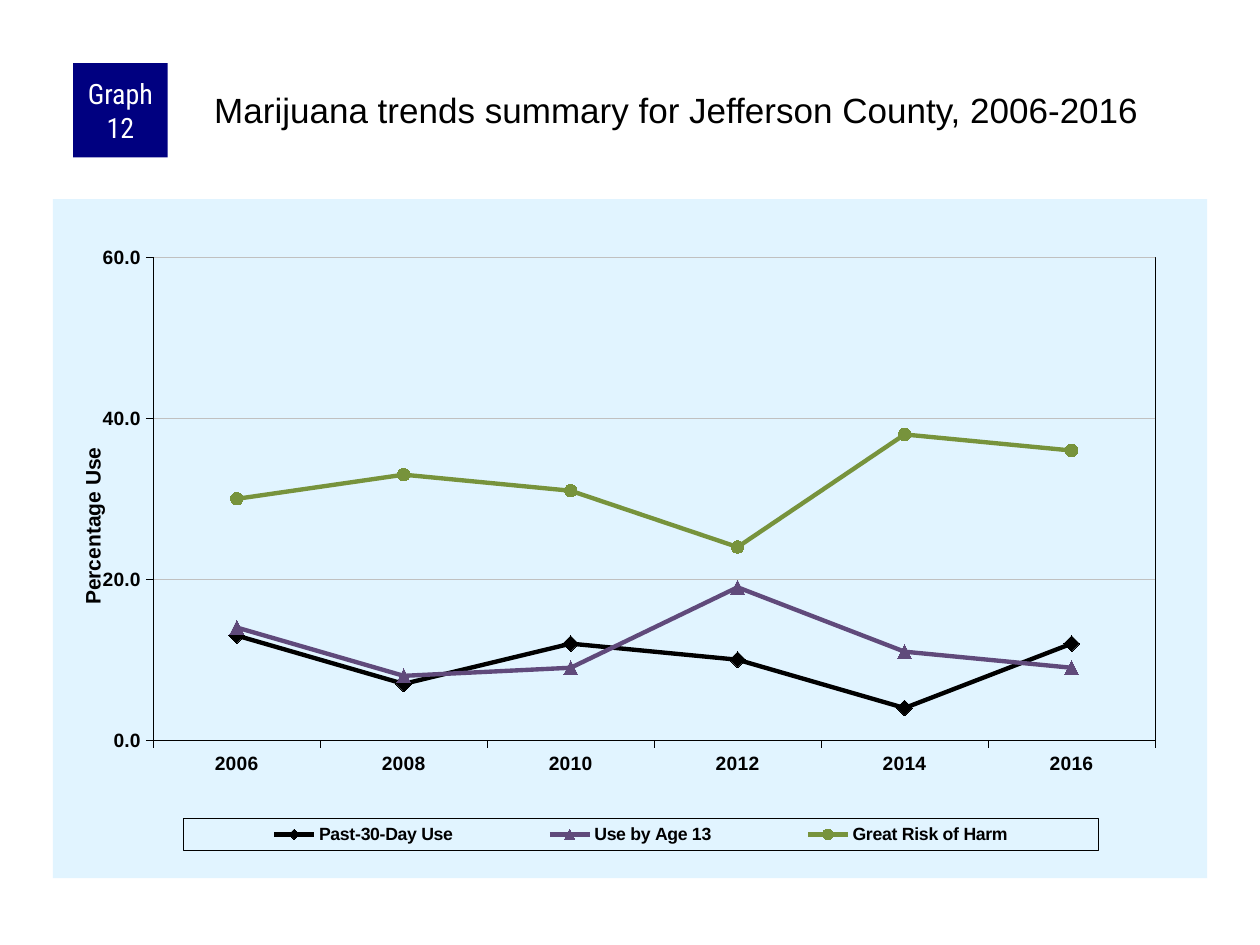
"""Builds a slide with a line chart of marijuana trends by survey year."""
from lxml import etree
from pptx import Presentation
from pptx import util as u
from pptx.chart import data
from pptx.dml import color
from pptx.enum import chart as ch, shapes, text
from pptx.oxml import ns

IN, PT = u.Inches, u.Pt


def paint(fill, tint):
    fill.solid()
    fill.fore_color.rgb = color.RGBColor.from_string(tint)


def place(node, spot, vals, inner=False):
    old = node.find(ns.qn("c:layout"))
    if old is not None:
        node.remove(old)
    lay = etree.Element(ns.qn("c:layout"))
    man = etree.SubElement(lay, ns.qn("c:manualLayout"))
    pairs = [("layoutTarget", "inner")] if inner else []
    pairs += [("xMode", "edge"), ("yMode", "edge"), *zip("xywh", vals)]
    for tag, val in pairs:
        etree.SubElement(man, ns.qn("c:" + tag)).set("val", str(val))
    node.insert(spot, lay)


prs = Presentation()
prs.slide_width, prs.slide_height = IN(10), IN(7.5)
slide = prs.slides.add_slide(prs.slide_layouts[5])

title = slide.shapes.title
badge = slide.shapes.add_shape(
    shapes.MSO_SHAPE.RECTANGLE, IN(0.58), IN(0.5), IN(0.75), IN(0.75))
badge.shadow.inherit = False
paint(badge.fill, "000080")
badge.line.fill.background()

spots = {"left": 1.67, "top": 0.67, "width": 7.92, "height": 0.83}
for key, val in spots.items():
    setattr(title, key, IN(val))

labels = [
    (badge, "Graph 12", "Roboto Condensed", 16, "FFFFFF",
     text.PP_ALIGN.CENTER, text.MSO_ANCHOR.MIDDLE, (0.05, 0, 0.05, 0)),
    (title, "Marijuana trends summary for Jefferson County, 2006-2016",
     "Arial", 20, "000000",
     text.PP_ALIGN.LEFT, text.MSO_ANCHOR.TOP, (0.03, 0.03, 0, 0)),
]
for shape, words, face, size, tint, align, anchor, pads in labels:
    frame = shape.text_frame
    frame.text = words
    frame.word_wrap = True
    frame.auto_size = text.MSO_AUTO_SIZE.NONE
    frame.vertical_anchor = anchor
    for side, pad in zip(("left", "top", "right", "bottom"), pads):
        setattr(frame, "margin_" + side, IN(pad))
    par = frame.paragraphs[0]
    par.alignment = align
    font = par.runs[0].font
    font.name, font.size = face, PT(size)
    paint(font.fill, tint)

mark = ch.XL_MARKER_STYLE
lines = [
    ("Past-30-Day Use", (13, 7, 12, 10, 4, 12), "000000", mark.DIAMOND, 9),
    ("Use by Age 13", (14, 8, 9, 19, 11, 9), "604A7B", mark.TRIANGLE, 8),
    ("Great Risk of Harm", (30, 33, 31, 24, 38, 36), "77933C",
     mark.CIRCLE, 7),
]
table = data.CategoryChartData(number_format="0.0")
table.categories = [str(year) for year in range(2006, 2017, 2)]
for name, vals, *rest in lines:
    table.add_series(name, vals)
chart = slide.shapes.add_chart(
    ch.XL_CHART_TYPE.LINE_MARKERS, IN(0.42), IN(1.58), IN(9.16), IN(5.39),
    table).chart
chart.has_title = False
chart.has_legend = True
chart.font.name, chart.font.size = "Arial", PT(8)
plot = chart.plots[0]
plot.vary_by_categories = False

for item, (name, vals, tint, style, size) in zip(plot.series, lines):
    item.smooth = False
    item.format.line.width = PT(2.5)
    item.marker.style, item.marker.size = style, size
    for fill in (item.format.line.fill, item.marker.format.fill,
                 item.marker.format.line.fill):
        paint(fill, tint)

cat, val = chart.category_axis, chart.value_axis
cat.has_major_gridlines = False
limits = {"minimum_scale": 0, "maximum_scale": 60, "major_unit": 20,
          "has_major_gridlines": True, "has_title": True}
for key, num in limits.items():
    setattr(val, key, num)
val.tick_labels.number_format = "0.0"
val.tick_labels.number_format_is_linked = False
val.axis_title.text_frame.text = "Percentage Use"
head = val.axis_title.text_frame.paragraphs[0].runs[0].font
legend = chart.legend
legend.position = ch.XL_LEGEND_POSITION.RIGHT
legend.include_in_layout = False

for font, size in ((cat.tick_labels.font, 11), (val.tick_labels.font, 11),
                   (legend.font, 10.1), (head, 12)):
    font.name, font.size, font.bold = "Arial", PT(size), True
    paint(font.fill, "000000")
for axis in (cat, val):
    axis.major_tick_mark = ch.XL_TICK_MARK.OUTSIDE
    axis.minor_tick_mark = ch.XL_TICK_MARK.NONE
for part, tint in ((cat, "000000"), (val, "000000"),
                   (val.major_gridlines, "C0C0C0")):
    part.format.line.width = PT(0.25)
    paint(part.format.line.fill, tint)

root = chart.element
area = root.find(".//" + ns.qn("c:plotArea"))
key = root.find(".//" + ns.qn("c:legend"))
name = area.find(".//" + ns.qn("c:title"))
place(area, 0, (0.087, 0.086, 0.868, 0.711), True)
place(key, 1, (0.113, 0.912, 0.793, 0.047))
place(name, 1, (0.02, 0.36))

for prior, back, edge in (
        (root.find(ns.qn("c:chart")), "E1F4FF", None),
        (area[-1], None, "000000"),
        (key.find(ns.qn("c:overlay")), None, "000000")):
    look = etree.Element(ns.qn("c:spPr"))
    rim = etree.Element(ns.qn("a:ln"), w=str(PT(0.25)))
    for node, tint in ((look, back), (rim, edge)):
        kind = "a:solidFill" if tint else "a:noFill"
        fill = etree.SubElement(node, ns.qn(kind))
        if tint:
            etree.SubElement(fill, ns.qn("a:srgbClr"), val=tint)
    look.append(rim)
    prior.addnext(look)

prs.save("out.pptx")
